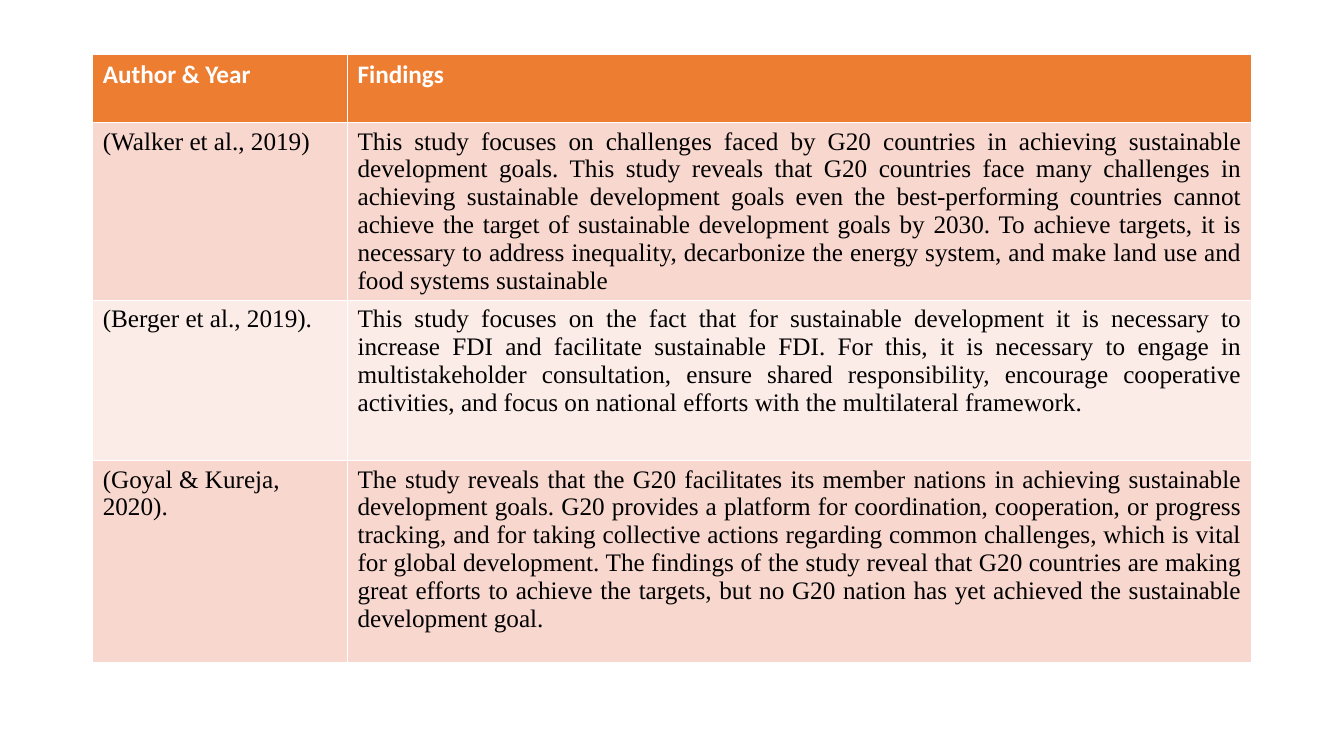
from pptx import Presentation
from pptx.dml.color import RGBColor as Color
from pptx.enum.text import PP_ALIGN as Align
from pptx.util import Pt

HEAD = ("Author & Year", "Findings")
STUDIES = [
    ("(Walker et al., 2019)",
     "This study focuses on challenges faced by G20 countries in achieving sustainable "
     "development goals. This study reveals that G20 countries face many challenges in "
     "achieving sustainable development goals even the best-performing countries cannot "
     "achieve the target of sustainable development goals by 2030. To achieve targets, it is "
     "necessary to address inequality, decarbonize the energy system, and make land use and "
     "food systems sustainable"),
    ("(Berger et al., 2019).",
     "This study focuses on the fact that for sustainable development it is necessary to "
     "increase FDI and facilitate sustainable FDI. For this, it is necessary to engage in "
     "multistakeholder consultation, ensure shared responsibility, encourage cooperative "
     "activities, and focus on national efforts with the multilateral framework."),
    ("(Goyal & Kureja, 2020).",
     "The study reveals that the G20 facilitates its member nations in achieving sustainable "
     "development goals. G20 provides a platform for coordination, cooperation, or progress "
     "tracking, and for taking collective actions regarding common challenges, which is vital "
     "for global development. The findings of the study reveal that G20 countries are making "
     "great efforts to achieve the targets, but no G20 nation has yet achieved the sustainable "
     "development goal."),
]
WIDTHS = (182, 646)
HEIGHTS = (48.5, 127, 114.5, 144.5)
LEFT, TOP = 66.25, 39
BANDS = ("FCECE8", "F8D7CE")


def paint(fill, tone):
    fill.solid()
    fill.fore_color.rgb = Color.from_string(tone)


def write(cell, text, font, tone, bold, align):
    para = cell.text_frame.paragraphs[0]
    para.alignment = align
    run = para.add_run()
    run.text = text
    run.font.name = font
    run.font.size = Pt(18)
    run.font.bold = bold
    paint(run.font.fill, tone)


deck = Presentation()
deck.slide_width, deck.slide_height = Pt(960), Pt(540)
slide = deck.slides.add_slide(deck.slide_layouts[6])
rows = [HEAD] + STUDIES
table = slide.shapes.add_table(
    len(rows), len(HEAD), Pt(LEFT), Pt(TOP), Pt(sum(WIDTHS)), Pt(sum(HEIGHTS))).table
for col, width in zip(table.columns, WIDTHS):
    col.width = Pt(width)
for row, height in zip(table.rows, HEIGHTS):
    row.height = Pt(height)

for r, texts in enumerate(rows):
    for c, text in enumerate(texts):
        cell = table.cell(r, c)
        if r == 0:
            paint(cell.fill, "ED7D31")
            write(cell, text, "Calibri", "FFFFFF", True, Align.LEFT)
        else:
            paint(cell.fill, BANDS[r % 2])
            align = Align.JUSTIFY if c else Align.LEFT
            write(cell, text, "Times New Roman", "000000", False, align)

deck.save("out.pptx")
